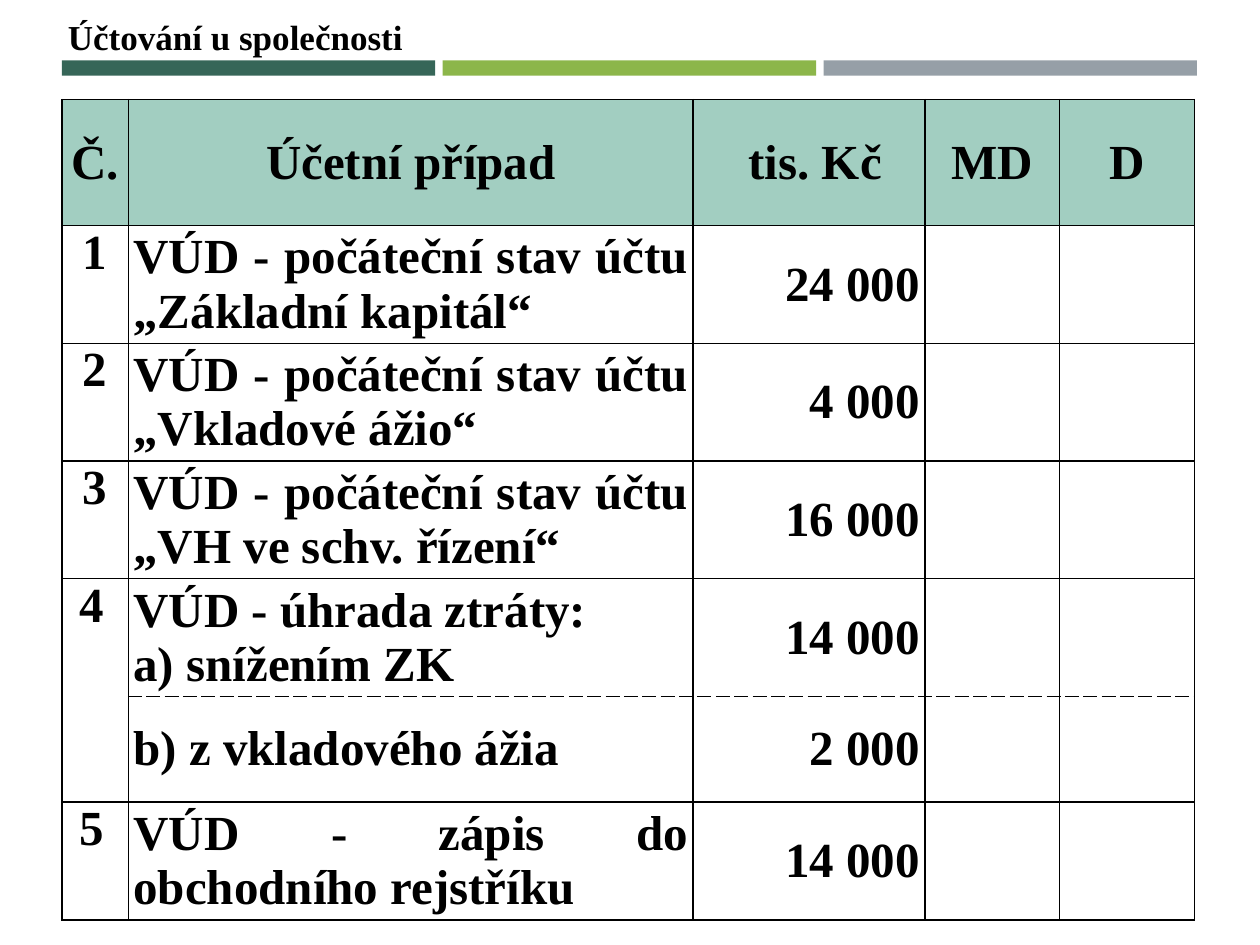
import pptx
import pptx.util
import pptx.dml.color
import pptx.enum.shapes
import pptx.enum.text
import pptx.oxml
import pptx.oxml.ns

Inches = pptx.util.Inches
Pt = pptx.util.Pt
ALIGN = pptx.enum.text.PP_ALIGN
ANCHOR = pptx.enum.text.MSO_ANCHOR

COLORS = {
    "text": "000000", "border": "000000", "header": "A2CEC1",
    "dark_green": "366658", "light_green": "8CB64A", "grey": "969FA7",
}
FONT = "Times New Roman"
COL_WIDTHS = [0.53, 4.48, 1.84, 1.07, 1.07]
ROW_HEIGHTS = [1, 0.93, 0.93, 0.93, 0.93, 0.84, 0.93]
HEADER = ["Č.", "Účetní případ", "tis. Kč", "MD", "D"]
ENTRIES = [
    ("1", "VÚD - počáteční stav účtu „Základní kapitál“", "24 000"),
    ("2", "VÚD - počáteční stav účtu „Vkladové ážio“", "4 000"),
    ("3", "VÚD - počáteční stav účtu „VH ve schv. řízení“", "16 000"),
    ("4", "VÚD - úhrada ztráty:\na) snížením ZK", "14 000"),
    ("", "b) z vkladového ážia", "2 000"),
    ("5", "VÚD - zápis do obchodního rejstříku", "14 000"),
]
SPLIT_ROW = 4  # first of the two rows that share one number
LEFT_NUMBERS = ("4", "5")


def rgb(name):
    return pptx.dml.color.RGBColor.from_string(COLORS[name])


def write(tf, text, size=28, align=ALIGN.LEFT):
    """Put each line of text in its own bold paragraph."""
    for i, line in enumerate(text.split("\n")):
        p = tf.paragraphs[0] if i == 0 else tf.add_paragraph()
        p.alignment = align
        r = p.add_run()
        r.text = line
        r.font.name = FONT
        r.font.size = Pt(size)
        r.font.bold = True
        r.font.color.rgb = rgb("text")


def set_borders(cell, dashed_side=None):
    tc_pr = cell._tc.get_or_add_tcPr()
    for side in "LRTB":
        dash = "dash" if side == dashed_side else "solid"
        tc_pr.append(pptx.oxml.parse_xml(
            f'<a:ln{side} {pptx.oxml.ns.nsdecls("a")} w="{Pt(1)}"><a:solidFill>'
            f'<a:srgbClr val="{COLORS["border"]}"/></a:solidFill>'
            f'<a:prstDash val="{dash}"/></a:ln{side}>'))


def add_bars(s, left, top, width, height, gap=0.06):
    names = ["dark_green", "light_green", "grey"]
    bar = (width - gap * (len(names) - 1)) / len(names)
    for i, name in enumerate(names):
        sp = s.shapes.add_shape(
            pptx.enum.shapes.MSO_SHAPE.RECTANGLE,
            Inches(left + i * (bar + gap)), Inches(top), Inches(bar), Inches(height))
        sp.shadow.inherit = False
        sp.fill.solid()
        sp.fill.fore_color.rgb = rgb(name)
        sp.line.fill.background()


def add_title(s, left, top, width, height):
    sp = s.shapes.add_textbox(Inches(left), Inches(top), Inches(width), Inches(height))
    sp.text_frame.word_wrap = False
    write(sp.text_frame, "Účtování u společnosti", size=20)


def fill_cell(cell, row, col, text):
    indent = text in LEFT_NUMBERS or (row == 0 and col == 2)
    cell.margin_left = Inches(0.14 if indent else 0.04)
    cell.margin_right = Inches(0.04)
    cell.margin_top = cell.margin_bottom = 0
    cell.vertical_anchor = ANCHOR.TOP if row and col == 0 else ANCHOR.MIDDLE
    dashed = {SPLIT_ROW: "B", SPLIT_ROW + 1: "T"}.get(row) if col else None
    set_borders(cell, dashed)
    if row == 0:
        cell.fill.solid()
        cell.fill.fore_color.rgb = rgb("header")
    else:
        cell.fill.background()
    if text:
        align = ALIGN.CENTER
        if row and col:
            align = ALIGN.JUSTIFY if col == 1 else ALIGN.RIGHT
        elif text in LEFT_NUMBERS:
            align = ALIGN.LEFT
        write(cell.text_frame, text, align=align)


def add_entries_table(s, left, top):
    table = s.shapes.add_table(
        len(ROW_HEIGHTS), len(COL_WIDTHS), Inches(left), Inches(top),
        Inches(sum(COL_WIDTHS)), Inches(sum(ROW_HEIGHTS))).table
    table.first_row = table.horz_banding = False
    for column, width in zip(table.columns, COL_WIDTHS):
        column.width = Inches(width)
    for row, height in zip(table.rows, ROW_HEIGHTS):
        row.height = Inches(height)
    table.cell(SPLIT_ROW, 0).merge(table.cell(SPLIT_ROW + 1, 0))
    for i, texts in enumerate([HEADER] + [entry + ("", "") for entry in ENTRIES]):
        for j, text in enumerate(texts):
            fill_cell(table.cell(i, j), i, j, text)


def main():
    prs = pptx.Presentation()
    prs.slide_width, prs.slide_height = Inches(10), Inches(7.5)
    s = prs.slides.add_slide(prs.slide_layouts[6])
    add_bars(s, 0.49, 0.48, 9.01, 0.12)
    add_title(s, 0.44, 0.07, 2.88, 0.44)
    add_entries_table(s, 0.49, 0.79)
    prs.save("out.pptx")


if __name__ == "__main__":
    main()
